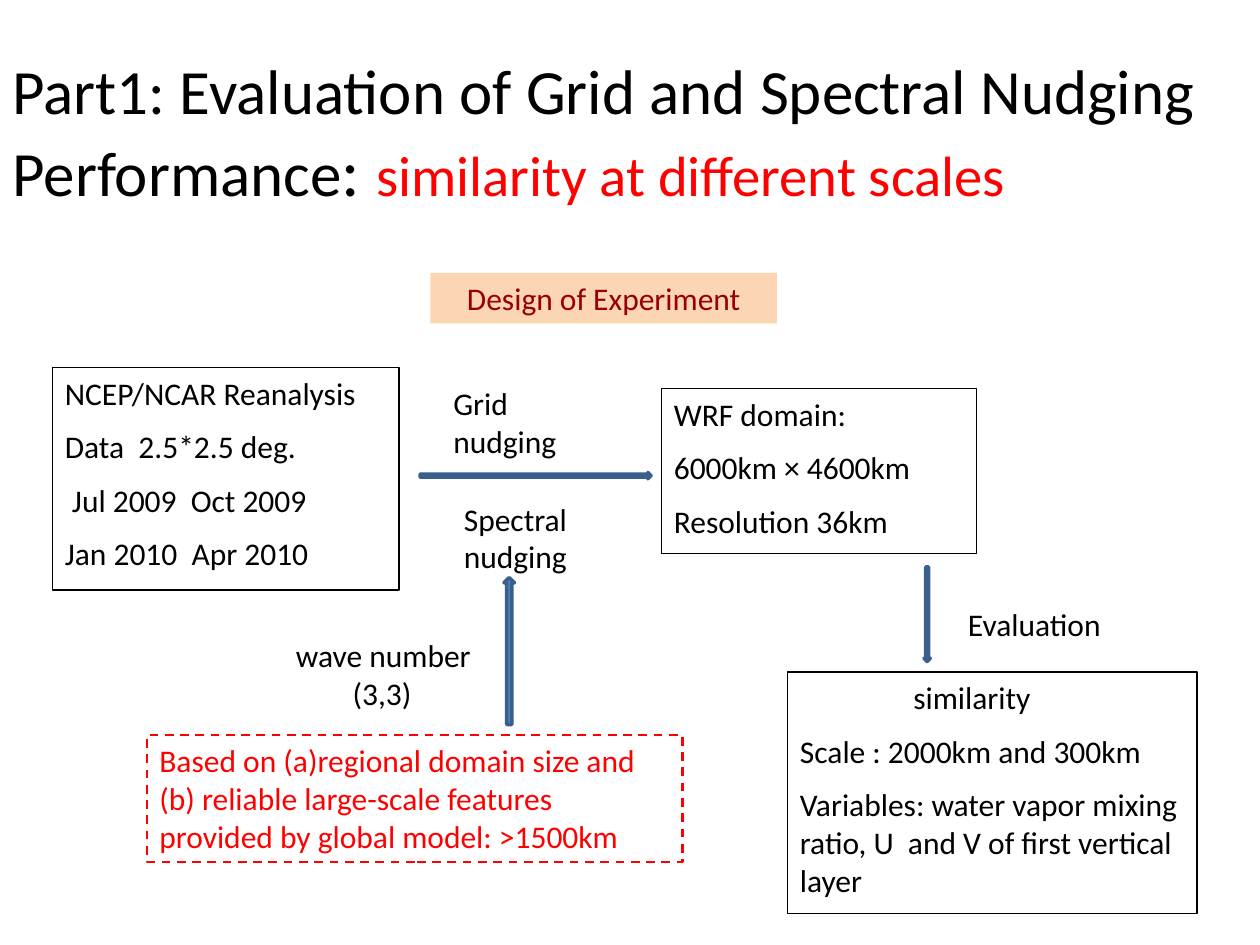
from pptx import Presentation
from pptx.dml.color import RGBColor
from pptx.enum.dml import MSO_LINE
from pptx.enum.shapes import MSO_SHAPE
from pptx.enum.text import MSO_ANCHOR, MSO_AUTO_SIZE, PP_ALIGN
from pptx.util import Pt

PX = 7620
FONT = "Calibri"
LEFT, CENTER = PP_ALIGN.LEFT, PP_ALIGN.CENTER
TOP, MIDDLE = MSO_ANCHOR.TOP, MSO_ANCHOR.MIDDLE
NO_AUTOFIT = MSO_AUTO_SIZE.NONE
DASH = MSO_LINE.DASH
RECTANGLE = MSO_SHAPE.RECTANGLE
RIGHT_ARROW, UP_ARROW, DOWN_ARROW = (
    MSO_SHAPE.RIGHT_ARROW, MSO_SHAPE.UP_ARROW, MSO_SHAPE.DOWN_ARROW)
COLORS = {
    "ink": "000000",
    "red": "FF0000",
    "maroon": "990000",
    "peach": "FCD5B5",
    "arrow": "4F81BD",
    "arrow_edge": "3A5F8C",
}


def px(*lengths):
    """Turn pixel lengths into EMU."""
    return [length * PX for length in lengths]


def color(name):
    """Look up a named colour."""
    return RGBColor.from_string(COLORS[name])


def write(frame, lines, ink="ink", align=LEFT, gap=0, indents=None):
    """Fill a text frame with one paragraph per line."""
    frame.word_wrap = True
    frame.auto_size = NO_AUTOFIT
    frame.vertical_anchor = TOP
    for index, line in enumerate(lines):
        paragraph = frame.paragraphs[0] if index == 0 else frame.add_paragraph()
        paragraph.text = line
        paragraph.alignment = align
        paragraph.space_before = Pt(gap if index else 0)
        paragraph.font.name = FONT
        paragraph.font.size = Pt(18)
        paragraph.font.color.rgb = color(ink)
        if indents and index in indents:
            paragraph._p.get_or_add_pPr().set("marL", str(indents[index] * PX))


def add_title(slide):
    """Place the title and its coloured topic."""
    title = slide.shapes.title
    title.left, title.top, title.width, title.height = px(0, 50, 1200, 150)
    frame = title.text_frame
    frame.auto_size = NO_AUTOFIT
    frame.vertical_anchor = MIDDLE
    paragraph = frame.paragraphs[0]
    paragraph.alignment = LEFT
    paragraph.font.name = FONT
    for words, size, ink in (
        ("Part1: Evaluation of Grid and Spectral Nudging Performance", 36, "ink"),
        (": ", 39.6, "ink"),
        ("similarity at different scales", 32.4, "red"),
    ):
        run = paragraph.add_run()
        run.text = words
        run.font.name = FONT
        run.font.size = Pt(size)
        run.font.color.rgb = color(ink)


def add_box(slide, bounds, lines, fill=None, edge=None, weight=0.75, dash=None, **text):
    """Add a rectangle holding spaced lines of text."""
    box = slide.shapes.add_shape(RECTANGLE, *px(*bounds))
    box.shadow.inherit = False
    if fill:
        box.fill.solid()
        box.fill.fore_color.rgb = color(fill)
    else:
        box.fill.background()
    if edge:
        box.line.color.rgb = color(edge)
        box.line.width = Pt(weight)
        box.line.dash_style = dash
    else:
        box.line.fill.background()
    write(box.text_frame, lines, gap=9, **text)


def add_label(slide, bounds, lines, **text):
    """Add a plain text label."""
    write(slide.shapes.add_textbox(*px(*bounds)).text_frame, lines, **text)


def add_arrow(slide, kind, bounds):
    """Add a slim block arrow."""
    arrow = slide.shapes.add_shape(kind, *px(*bounds))
    arrow.shadow.inherit = False
    arrow.fill.solid()
    arrow.fill.fore_color.rgb = color("arrow")
    arrow.line.color.rgb = color("arrow_edge")
    arrow.line.width = Pt(2)


def main():
    """Build the experiment design slide."""
    deck = Presentation()
    deck.slide_width, deck.slide_height = px(1200, 900)
    slide = deck.slides.add_slide(deck.slide_layouts[5])
    add_title(slide)

    add_box(slide, (410, 260, 330, 48), ["Design of Experiment"],
            fill="peach", ink="maroon", align=CENTER)
    add_box(slide, (50, 350, 330, 212),
            ["NCEP/NCAR Reanalysis", "Data  2.5*2.5 deg.",
             " Jul 2009  Oct 2009", "Jan 2010  Apr 2010"], edge="ink")
    add_box(slide, (630, 370, 300, 157),
            ["WRF domain:", "6000km × 4600km", "Resolution 36km"], edge="ink")
    add_box(slide, (140, 700, 510, 121),
            ["Based on (a)regional domain size and (b) reliable large-scale "
             "features provided by global model: >1500km"],
            edge="red", weight=1.25, dash=DASH, ink="red")
    add_box(slide, (750, 640, 390, 230),
            ["similarity", "Scale : 2000km and 300km",
             "Variables: water vapor mixing ratio, U  and V of first vertical layer"],
            edge="ink", indents={0: 108})

    add_arrow(slide, RIGHT_ARROW, (400, 450, 220, 6))
    add_arrow(slide, UP_ARROW, (480, 550, 10, 140))
    add_arrow(slide, DOWN_ARROW, (880, 540, 6, 90))

    add_label(slide, (420, 360, 190, 85), ["Grid", "nudging"])
    add_label(slide, (430, 470, 170, 85), ["Spectral nudging"])
    add_label(slide, (270, 600, 200, 85), ["wave number", "(3,3)"], indents={1: 54})
    add_label(slide, (910, 570, 200, 48), ["Evaluation"])

    deck.save("out.pptx")


if __name__ == "__main__":
    main()
